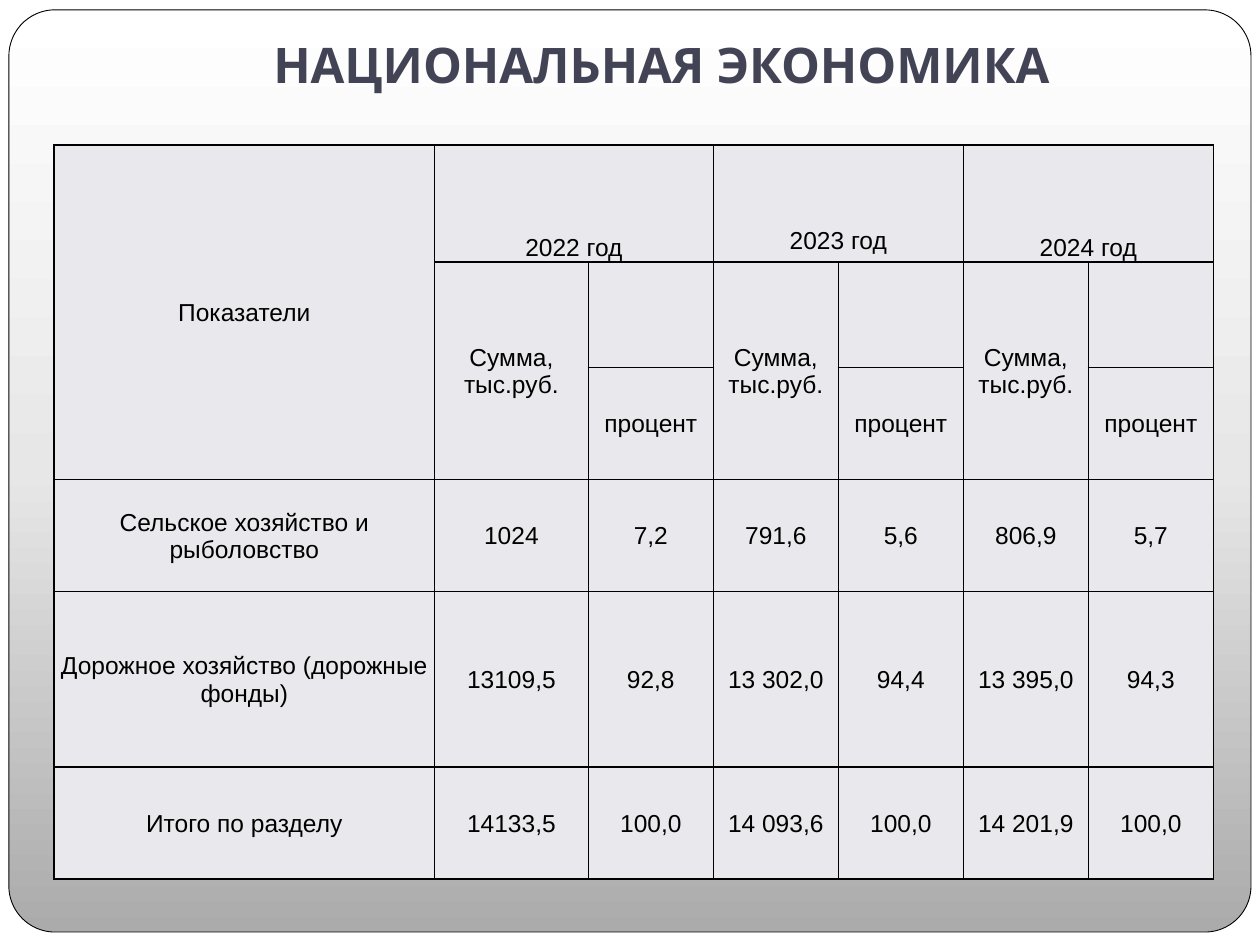
from copy import deepcopy

from lxml import etree
from pptx import Presentation
from pptx.dml.color import RGBColor
from pptx.enum import shapes, text
from pptx.oxml import ns
from pptx.util import Cm, Pt

COLORS = {
    "paper": "FFFFFF",
    "ink": "000000",
    "title": "424456",
    "cell": "E9E9ED",
    "dark": "ABABAB",
    "middle": "E7E7E7",
}
YEARS = ["2022 год", "2023 год", "2024 год"]
ROWS = [
    ["Сельское хозяйство и рыболовство", "1024", "7,2", "791,6", "5,6", "806,9", "5,7"],
    ["Дорожное хозяйство (дорожные фонды)", "13109,5", "92,8", "13 302,0", "94,4",
     "13 395,0", "94,3"],
    ["Итого по разделу", "14133,5", "100,0", "14 093,6", "100,0", "14 201,9", "100,0"],
]
COL_WIDTHS = [7.67, 3.1] + [2.52] * 5
ROW_HEIGHTS = [2.36, 2.13, 2.26, 2.26, 3.53, 2.26]


def rgb(name):
    return RGBColor.from_string(COLORS[name])


def style_text(p, font, size, color, bold=False):
    p.alignment = text.PP_ALIGN.CENTER
    p.font.name, p.font.size, p.font.bold = font, Pt(size), bold
    p.font.color.rgb = rgb(color)
    for r in p.runs:
        r.font.name, r.font.size, r.font.bold = font, Pt(size), bold
        r.font.color.rgb = rgb(color)


def add_panel(s, x, y, w, h):
    """Rounded panel that shades from dark at the bottom to white at the top."""
    sp = s.shapes.add_shape(shapes.MSO_SHAPE.ROUNDED_RECTANGLE, Cm(x), Cm(y), Cm(w), Cm(h))
    sp.shadow.inherit = False
    sp.adjustments[0] = 0.05
    sp.line.color.rgb = rgb("ink")
    sp.line.width = Pt(0.5)
    sp.fill.gradient()
    sp.fill.gradient_angle = 90
    stops = next(sp.element.iter(ns.qn("a:gsLst")))
    stops.insert(1, deepcopy(stops[0]))
    for stop, name, place in zip(sp.fill.gradient_stops, ["dark", "middle", "paper"], [0, 0.5, 1]):
        stop.color.rgb = rgb(name)
        stop.position = place


def add_title(s, x, y, w, h):
    tf = s.shapes.add_textbox(Cm(x), Cm(y), Cm(w), Cm(h)).text_frame
    tf.word_wrap = True
    tf.vertical_anchor = text.MSO_ANCHOR.BOTTOM
    tf.margin_bottom = Cm(0.25)
    tf.text = "НАЦИОНАЛЬНАЯ ЭКОНОМИКА"
    style_text(tf.paragraphs[0], "Karla", 28, "title", bold=True)


def add_borders(cell):
    tc_pr = cell._tc.get_or_add_tcPr()
    for i, side in enumerate(["a:lnL", "a:lnR", "a:lnT", "a:lnB"]):
        ln = etree.Element(ns.qn(side), w=str(Pt(1)))
        fill = etree.SubElement(ln, ns.qn("a:solidFill"))
        etree.SubElement(fill, ns.qn("a:srgbClr"), val=COLORS["ink"])
        tc_pr.insert(i, ln)


def style_cell(cell):
    cell.fill.solid()
    cell.fill.fore_color.rgb = rgb("cell")
    cell.margin_left = cell.margin_right = cell.margin_top = Cm(0.03)
    cell.margin_bottom = 0
    cell.vertical_anchor = text.MSO_ANCHOR.MIDDLE
    style_text(cell.text_frame.paragraphs[0], "Arial", 14, "ink")
    add_borders(cell)


def fill_header(table):
    table.cell(0, 0).merge(table.cell(2, 0))
    table.cell(0, 0).text = "Показатели"
    for i, year in enumerate(YEARS):
        col = 1 + 2 * i
        table.cell(0, col).merge(table.cell(0, col + 1))
        table.cell(1, col).merge(table.cell(2, col))
        table.cell(0, col).text = year
        table.cell(1, col).text = "Сумма, тыс.руб."
        table.cell(2, col + 1).text = "процент"


def add_budget_table(s, x, y):
    frame = s.shapes.add_table(len(ROW_HEIGHTS), len(COL_WIDTHS), Cm(x), Cm(y),
                               Cm(sum(COL_WIDTHS)), Cm(sum(ROW_HEIGHTS)))
    table = frame.table
    table.first_row = table.horz_banding = False
    for column, width in zip(table.columns, COL_WIDTHS):
        column.width = Cm(width)
    for row, height in zip(table.rows, ROW_HEIGHTS):
        row.height = Cm(height)
    fill_header(table)
    for i, values in enumerate(ROWS, start=3):
        for j, value in enumerate(values):
            table.cell(i, j).text = value
    for cell in table.iter_cells():
        style_cell(cell)
    for col in (1, 3, 5):
        table.cell(0, col).vertical_anchor = text.MSO_ANCHOR.BOTTOM
    table.cell(0, 3).margin_bottom = Cm(0.14)


def main():
    prs = Presentation()
    prs.slide_width, prs.slide_height = Cm(25.4), Cm(19.05)
    s = prs.slides.add_slide(prs.slide_layouts[6])
    s.background.fill.solid()
    s.background.fill.fore_color.rgb = rgb("paper")
    add_panel(s, 0.18, 0.2, 25.04, 18.59)
    add_title(s, 2.54, 0.76, 21.59, 1.37)
    add_budget_table(s, 1.09, 2.92)
    prs.save("out.pptx")


if __name__ == "__main__":
    main()
